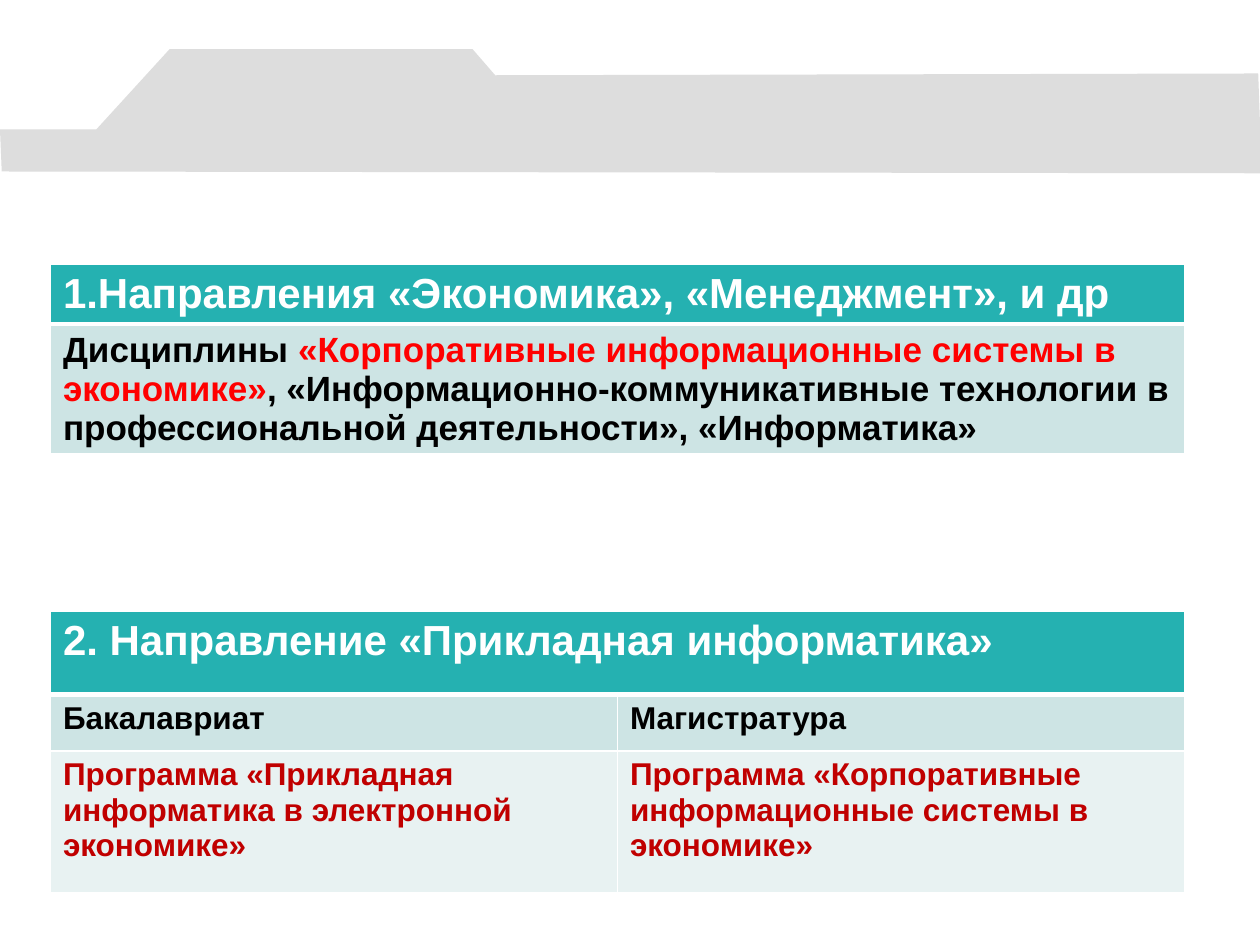
from lxml.etree import SubElement
from pptx import Presentation
from pptx.dml.color import RGBColor
from pptx.oxml.ns import qn
from pptx.util import Pt

WHITE = RGBColor(0xFF, 0xFF, 0xFF)
BLACK = RGBColor(0, 0, 0)
GREY = RGBColor(0xDD, 0xDD, 0xDD)
TEAL = RGBColor(0x25, 0xB1, 0xB1)
LIGHT = RGBColor(0xCD, 0xE4, 0xE4)
PALE = RGBColor(0xE8, 0xF2, 0xF2)
RED = RGBColor(0xFF, 0, 0)
DARK_RED = RGBColor(0xC0, 0, 0)


def set_borders(cell, widths):
    tcPr = cell._tc.get_or_add_tcPr()
    for side, width in zip("LRTB", widths):
        ln = SubElement(tcPr, qn(f"a:ln{side}"), w=str(Pt(width)))
        fill = SubElement(ln, qn("a:solidFill"))
        SubElement(fill, qn("a:srgbClr"), val=str(WHITE))


def add_grid(slide, top, heights, columns, rows):
    """Each row is (fill, size, cells); each cell is a list of (text, colour) runs."""
    width = 648
    table = slide.shapes.add_table(len(rows), columns, Pt(28.8), Pt(top),
                                   Pt(width), Pt(sum(heights))).table
    for col in table.columns:
        col.width = Pt(width / columns)
    for i, (fill, size, cells) in enumerate(rows):
        table.rows[i].height = Pt(heights[i])
        for j in range(columns):
            cell = table.cell(i, j)
            # A thick rule divides the header from the body
            set_borders(cell, (1, 1, 3 if i == 1 else 1, 3 if i == 0 else 1))
            cell.fill.solid()
            cell.fill.fore_color.rgb = fill
        if len(cells) < columns:
            table.cell(i, 0).merge(table.cell(i, columns - 1))
        for j, runs in enumerate(cells):
            p = table.cell(i, j).text_frame.paragraphs[0]
            for text, color in runs:
                r = p.add_run()
                r.text = text
                for name, value in {"name": "Arial", "size": Pt(size), "bold": True}.items():
                    setattr(r.font, name, value)
                r.font.color.rgb = color


prs = Presentation()
prs.slide_width, prs.slide_height = Pt(720), Pt(540)
s = prs.slides.add_slide(prs.slide_layouts[6])

# Grey band across the top
points = [(0, 74.2), (54.7, 74.2), (97.2, 28.1), (270, 28.1),
          (283, 42.8), (719.3, 42.5), (720.7, 99.4), (0.7, 97.9)]
builder = s.shapes.build_freeform(*points[0], scale=Pt(1))
builder.add_line_segments(points[1:], close=True)
sp = builder.convert_to_shape()
sp.shadow.inherit = False
sp.fill.solid()
sp.fill.fore_color.rgb = GREY
sp.line.fill.background()

# Second field of study
add_grid(s, 349.2, [47.5, 32.4, 81], 2, [
    (TEAL, 24, [[("2. Направление «Прикладная информатика»", WHITE)]]),
    (LIGHT, 18, [[("Бакалавриат", BLACK)], [("Магистратура", BLACK)]]),
    (PALE, 18, [
        [("Программа «Прикладная информатика в электронной экономике»", DARK_RED)],
        [("Программа «Корпоративные информационные системы в экономике»", DARK_RED)],
    ]),
])

# First fields of study
add_grid(s, 151.2, [34, 74], 1, [
    (TEAL, 24, [[("1.Направления «Экономика», «Менеджмент», и др", WHITE)]]),
    (LIGHT, 20, [[
        ("Дисциплины ", BLACK),
        ("«Корпоративные информационные системы в экономике»", RED),
        (", «Информационно-коммуникативные технологии в профессиональной "
         "деятельности», «Информатика»", BLACK),
    ]]),
])

prs.save("out.pptx")
